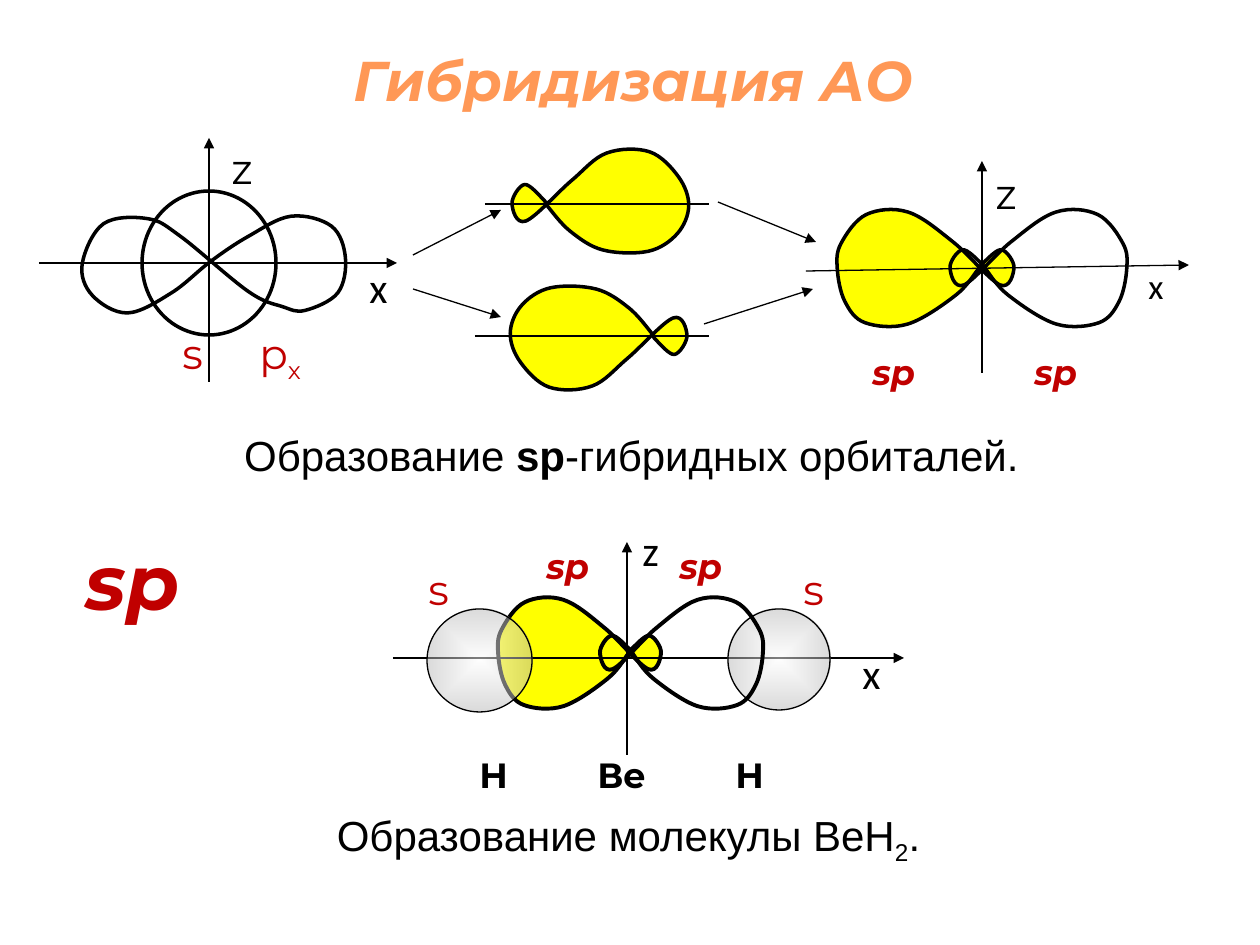
from pptx import Presentation, util as u
from pptx.dml.color import RGBColor
from pptx.enum import shapes, text
from pptx.oxml import parse_xml
from pptx.oxml.ns import nsdecls, qn
from lxml import etree

PX = 914400 / 126
BLACK = RGBColor(0, 0, 0)
RED = RGBColor(0xC0, 0, 0)
ORANGE = RGBColor(0xFF, 0x98, 0x56)
YELLOW = RGBColor(0xFF, 0xFF, 0)
SANS, HEAD, LABEL = "Arial", "Montserrat", "Calibri"

# Outlines: size of the design grid, then the knots of a closed smooth curve
P_ORBITAL = (212, 78), [
    (103, 37), (133, 17), (167, 1), (199, 9), (210, 34), (204, 62), (178, 76), (160, 73),
    (133, 61), (79, 17), (53, 3), (18, 7), (1, 39), (9, 64), (37, 78), (72, 62)]
FREE_HYBRID = (141, 85), [
    (25, 41), (10, 29), (0, 44), (11, 58), (47, 26), (75, 4), (109, 3), (132, 23),
    (140, 46), (131, 68), (108, 82), (72, 81), (46, 66), (28, 46)]
PAIRED_HYBRID = (141, 97), [
    (25, 45), (10, 34), (0, 48), (11, 62), (48, 28), (84, 4), (117, 6), (137, 29),
    (140, 49), (134, 75), (118, 92), (84, 93), (46, 70), (28, 49)]

# Lines: x1, y1, x2, y2, arrowhead
PROCESS_ARROWS = [(413, 255, 501, 210, True), (413, 289, 501, 317, True),
                  (718, 202, 816, 242, True), (704, 324, 813, 289, True)]
FREE_AXES = [(475, 336, 709, 336, False), (485, 204, 709, 204, False)]
ATOM_AXES = [(39, 263, 397, 263, True), (209, 382, 209, 138, True)]
HYBRID_AXES = [(806, 271, 1189, 265, True), (982, 373, 982, 161, True)]
MOLECULE_AXES = [(393, 658, 904, 658, True), (627, 755, 627, 542, True)]

SPHERES = [(728, 609, 102, 101), (427, 609, 105, 103)]

# Captions: runs, box, format
CAPTIONS = [
    ([("Гибридизация АО", {})], (335, 39, 597, 81),
     dict(size=32, color=ORANGE, bold=True, italic=True, center=True, wrap=False)),
    ([("Образование ", {}), ("sp", {"bold": True}), ("-гибридных орбиталей.", {})],
     (190, 423, 883, 69), dict(font=SANS, center=True)),
    ([("Образование молекулы ВеН", {}), ("2", {"sub": True}), (".", {})],
     (210, 803, 837, 69), dict(font=SANS, center=True)),
    ([("sp", {})], (73, 527, 125, 106),
     dict(size=44, color=RED, bold=True, italic=True, wrap=False)),
    ([("p", {}), ("x", {"sub": True})], (247, 321, 90, 71), dict(color=RED)),
]

# Single labels: format, then (text, left, top)
LABELS = [
    (dict(color=RED), [("s", 170, 321), ("s", 416, 557), ("s", 791, 557)]),
    (dict(), [("z", 219, 136), ("z", 983, 161)]),
    (dict(font=LABEL), [("х", 357, 255), ("z", 630, 518), ("x", 850, 641)]),
    (dict(font=LABEL, size=20), [("x", 1136, 258)]),
    (dict(size=20, color=RED, bold=True, italic=True),
     [("sp", 534, 538), ("sp", 667, 538), ("sp", 860, 344), ("sp", 1022, 344)]),
    (dict(size=20, bold=True), [("Н", 467, 747), ("Ве", 585, 747), ("Н", 723, 747)]),
]
LABEL_SIZE = (76, 63)


def emu(*px):
    return [u.Emu(round(v * PX)) for v in px]


def smooth(sp):
    """Turn the straight sides of a closed freeform into Catmull-Rom curves."""
    outline = next(sp._element.iter(qn("a:path")))
    knots = [(int(pt.get("x")), int(pt.get("y"))) for pt in outline.iter(qn("a:pt"))]
    n = len(knots)
    for i, side in enumerate(outline.findall(qn("a:lnTo")) + [None]):
        a, b, c, d = (knots[(i + k) % n] for k in (-1, 0, 1, 2))
        curve = etree.Element(qn("a:cubicBezTo"))
        for pt in ([q + (r - p) / 6 for p, q, r in zip(a, b, c)],
                   [q - (r - p) / 6 for p, q, r in zip(b, c, d)], c):
            x, y = (str(round(v)) for v in pt)
            etree.SubElement(curve, qn("a:pt"), x=x, y=y)
        if side is None:
            outline.find(qn("a:close")).addprevious(curve)
        else:
            outline.replace(side, curve)


def style(sp, fill=None, width=2.0):
    sp.shadow.inherit = False
    if fill is None:
        sp.fill.background()
    else:
        sp.fill.solid()
        sp.fill.fore_color.rgb = fill
    sp.line.color.rgb = BLACK
    sp.line.width = u.Pt(width)


def add_orbital(s, outline, box, fill=None, width=2.0, flip_x=False, flip_y=False):
    (gw, gh), knots = outline
    x, y, w, h = box
    points = [emu(x + w * (1 - px / gw if flip_x else px / gw),
                  y + h * (1 - py / gh if flip_y else py / gh))
              for px, py in knots]
    builder = s.shapes.build_freeform(*points[0], scale=1.0)
    builder.add_line_segments(points[1:], close=True)
    sp = builder.convert_to_shape()
    smooth(sp)
    style(sp, fill, width)


def add_lines(s, lines):
    for x1, y1, x2, y2, arrow in lines:
        c = s.shapes.add_connector(shapes.MSO_CONNECTOR.STRAIGHT, *emu(x1, y1, x2, y2))
        c.line.color.rgb = BLACK
        c.line.width = u.Pt(0.75)
        if arrow:
            etree.SubElement(c.line._get_or_add_ln(), qn("a:tailEnd"), type="triangle")
        etree.SubElement(c._element.spPr, qn("a:effectLst"))


def add_circle(s, box, width):
    sp = s.shapes.add_shape(shapes.MSO_SHAPE.OVAL, *emu(*box))
    style(sp, width=width)
    return sp


def add_sphere(s, box):
    """Circle with a half-transparent white-to-grey glow from its centre."""
    sp = add_circle(s, box, 0.75)
    stops = "".join(
        f'<a:gs pos="{pos}"><a:srgbClr val="{color}"><a:alpha val="50000"/></a:srgbClr></a:gs>'
        for pos, color in ((0, "FFFFFF"), (100000, "B6B6B6")))
    glow = parse_xml(
        f'<a:gradFill {nsdecls("a")} rotWithShape="1"><a:gsLst>{stops}</a:gsLst>'
        '<a:path path="shape"><a:fillToRect l="50000" t="50000" r="50000" b="50000"/>'
        '</a:path></a:gradFill>')
    spPr = sp._element.spPr
    spPr.replace(spPr.find(qn("a:noFill")), glow)


def add_text(s, runs, box, font=HEAD, size=24, color=BLACK, bold=False, italic=False,
             center=False, wrap=True):
    tf = s.shapes.add_textbox(*emu(*box)).text_frame
    tf.word_wrap = wrap
    p = tf.paragraphs[0]
    p.alignment = text.PP_ALIGN.CENTER if center else text.PP_ALIGN.LEFT
    for content, extra in runs:
        r = p.add_run()
        r.text = content
        f = r.font
        f.name, f.size, f.italic = font, u.Pt(size), italic
        f.bold = extra.get("bold", bold)
        f.color.rgb = color
        if extra.get("sub"):
            r._r.get_or_add_rPr().set("baseline", "-25000")


def main():
    prs = Presentation()
    prs.slide_width, prs.slide_height = u.Inches(10), u.Inches(7.5)
    s = prs.slides.add_slide(prs.slide_layouts[6])

    add_lines(s, PROCESS_ARROWS)
    add_orbital(s, FREE_HYBRID, (512, 148, 178, 107), YELLOW)
    add_orbital(s, FREE_HYBRID, (509, 284, 178, 107), YELLOW, flip_x=True, flip_y=True)
    add_lines(s, FREE_AXES)

    add_circle(s, (142, 191, 134, 144), 2)
    add_orbital(s, P_ORBITAL, (81, 215, 267, 98))
    add_lines(s, ATOM_AXES)

    add_orbital(s, PAIRED_HYBRID, (836, 207, 178, 122), YELLOW, flip_x=True)
    add_lines(s, HYBRID_AXES)
    add_orbital(s, PAIRED_HYBRID, (950, 207, 178, 122))

    add_orbital(s, PAIRED_HYBRID, (497, 595, 164, 116), YELLOW, 2.25, flip_x=True)
    add_lines(s, MOLECULE_AXES)
    for box in SPHERES:
        add_sphere(s, box)
    add_orbital(s, PAIRED_HYBRID, (600, 595, 164, 116), width=2.25)

    for runs, box, fmt in CAPTIONS:
        add_text(s, runs, box, **fmt)
    for fmt, items in LABELS:
        for label, x, y in items:
            add_text(s, [(label, {})], (x, y, *LABEL_SIZE), **fmt)
    prs.save("out.pptx")


if __name__ == "__main__":
    main()
